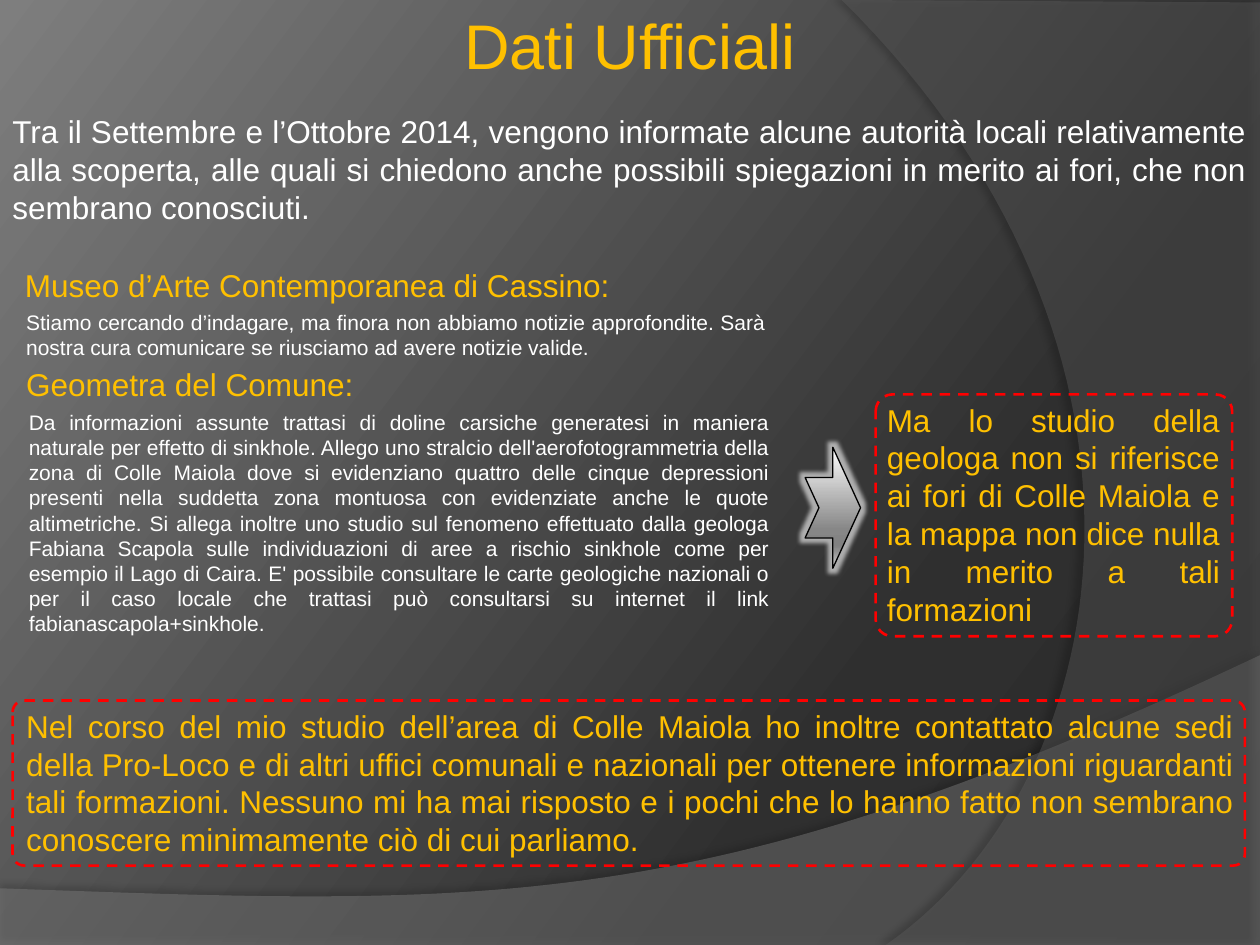
"""Build the slide "Dati Ufficiali" with the official replies about the holes."""
import pptx
import pptx.util
import pptx.dml.color
import pptx.enum.dml
import pptx.enum.shapes
import pptx.enum.text
import pptx.oxml
import pptx.oxml.ns

Inches = pptx.util.Inches
Pt = pptx.util.Pt
RGBColor = pptx.dml.color.RGBColor
qn = pptx.oxml.ns.qn
NS = pptx.oxml.ns.nsdecls("a")

GOLD = RGBColor(0xFF, 0xC0, 0x00)
WHITE = RGBColor(0xFF, 0xFF, 0xFF)
RED = RGBColor(0xFF, 0x00, 0x00)
BLACK = RGBColor(0x00, 0x00, 0x00)
SWEEP_GREY = RGBColor(0x7F, 0x7F, 0x7F)
SIDE_GREY = RGBColor(0x5E, 0x5E, 0x5E)


def set_gradient(fill, element, stops, clockwise_angle):
    fill.gradient()
    fill.gradient_angle = 360 - clockwise_angle
    stop_list = next(element.iter(qn("a:gsLst")))
    stop_list.clear()
    for position, color in stops:
        stop_list.append(pptx.oxml.parse_xml(
            f'<a:gs {NS} pos="{position * 1000}"><a:srgbClr val="{color}"/></a:gs>'))


def format_text(frame, text, size, color, alignment):
    frame.word_wrap = True
    frame.vertical_anchor = pptx.enum.text.MSO_ANCHOR.TOP
    frame.text = text
    paragraph = frame.paragraphs[0]
    paragraph.alignment = alignment
    font = paragraph.runs[0].font
    font.name = "Arial"
    font.size = Pt(size)
    font.color.rgb = color


presentation = pptx.Presentation()
presentation.slide_width = Inches(10)
presentation.slide_height = Inches(7.5)
slide = presentation.slides.add_slide(presentation.slide_layouts[5])
set_gradient(slide.background.fill, slide.element,
             [(0, "282828"), (30, "2F2F2F"), (100, "7E7E7E")], 217)

title = slide.shapes.title
title.left, title.top = Inches(0), Inches(0)
title.width, title.height = Inches(10), Inches(0.71)
format_text(title.text_frame, "Dati Ufficiali", 36, GOLD,
            pptx.enum.text.PP_ALIGN.CENTER)

swooshes = [
    ([(0, 7.05), (0, 7.51), (10, 7.51), (10, 5.2)],
     [(10, 5.2), (5.59, 7.29), (3.91, 7.19), (0, 7.05)],
     SWEEP_GREY, 45, 35, 3.5, 270),
    ([(10, 0.02), (10, 7.5), (7.03, 7.5)],
     [(7.03, 7.5), (8.91, 6.19), (9.47, 2.75), (6.68, 0)],
     SIDE_GREY, 40, 45, 4, 180),
]
CURVE_STEPS = 60
for corners, controls, color, opacity, shadow_opacity, distance, direction in swooshes:
    outline = list(corners)
    for step in range(1, CURVE_STEPS + 1):
        t = step / CURVE_STEPS
        weights = [(1 - t) ** 3, 3 * t * (1 - t) ** 2, 3 * t ** 2 * (1 - t), t ** 3]
        outline.append([sum(w * point[axis] for w, point in zip(weights, controls))
                        for axis in (0, 1)])
    outline = [(Inches(x), Inches(y)) for x, y in outline]
    builder = slide.shapes.build_freeform(*outline[0])
    builder.add_line_segments(outline[1:], close=True)
    swoosh = builder.convert_to_shape()
    swoosh.fill.solid()
    swoosh.fill.fore_color.rgb = color
    next(swoosh.element.iter(qn("a:srgbClr"))).append(
        pptx.oxml.parse_xml(f'<a:alpha {NS} val="{opacity * 1000}"/>'))
    swoosh.line.fill.background()
    swoosh.shadow.inherit = False
    next(swoosh.element.iter(qn("a:effectLst"))).append(pptx.oxml.parse_xml(
        f'<a:outerShdw {NS} blurRad="{Pt(4)}" dist="{Pt(distance)}" '
        f'dir="{direction * 60000}" algn="ctr" rotWithShape="0"><a:srgbClr val="000000">'
        f'<a:alpha val="{shadow_opacity * 1000}"/></a:srgbClr></a:outerShdw>'))
    title.element.addprevious(swoosh.element)

passages = [
    (0, 0.84, 9.99, 1.01, 18, WHITE,
     "Tra il Settembre e l’Ottobre 2014, vengono informate alcune autorità locali "
     "relativamente alla scoperta, alle quali si chiedono anche possibili spiegazioni "
     "in merito ai fori, che non sembrano conosciuti."),
    (0.1, 2.06, 6.07, 0.71, 18, GOLD, "Museo d’Arte Contemporanea di Cassino:"),
    (0.11, 2.41, 6.07, 0.5, 12, WHITE,
     "Stiamo cercando d’indagare, ma finora non abbiamo notizie approfondite. Sarà "
     "nostra cura comunicare se riusciamo ad avere notizie valide."),
    (0.13, 3.2, 6.08, 1.92, 12, WHITE,
     "Da informazioni assunte trattasi di doline carsiche generatesi in maniera naturale "
     "per effetto di sinkhole. Allego uno stralcio dell'aerofotogrammetria della zona di "
     "Colle Maiola dove si evidenziano quattro delle cinque depressioni presenti nella "
     "suddetta zona montuosa con evidenziate anche le quote altimetriche. Si allega "
     "inoltre uno studio sul fenomeno effettuato dalla geologa Fabiana Scapola sulle "
     "individuazioni di aree a rischio sinkhole come per esempio il Lago di Caira. "
     "E' possibile consultare le carte geologiche nazionali o per il caso locale che "
     "trattasi può consultarsi su internet il link fabianascapola+sinkhole."),
    (0.11, 2.85, 6.07, 0.71, 18, GOLD, "Geometra del Comune:"),
    (6.94, 3.13, 2.84, 1.92, 18, GOLD,
     "Ma lo studio della geologa non si riferisce ai fori di Colle Maiola e la mappa "
     "non dice nulla in merito a tali formazioni"),
    (0.11, 5.56, 9.78, 1.31, 18, GOLD,
     "Nel corso del mio studio dell’area di Colle Maiola ho inoltre contattato alcune "
     "sedi della Pro-Loco e di altri uffici comunali e nazionali per ottenere "
     "informazioni riguardanti tali formazioni. Nessuno mi ha mai risposto e i pochi "
     "che lo hanno fatto non sembrano conoscere minimamente ciò di cui parliamo."),
]
for left, top, width, height, size, color, text in passages:
    passage = slide.shapes.add_textbox(
        Inches(left), Inches(top), Inches(width), Inches(height))
    format_text(passage.text_frame, text, size, color,
                pptx.enum.text.PP_ALIGN.JUSTIFY)

arrow = slide.shapes.add_shape(
    pptx.enum.shapes.MSO_SHAPE.NOTCHED_RIGHT_ARROW,
    Inches(6.39), Inches(3.55), Inches(0.44), Inches(0.96))
set_gradient(arrow.fill, arrow.element,
             [(0, "FEFEFE"), (68, "878787"), (81, "818181"),
              (86, "909090"), (100, "D3D3D3")], 90)
arrow.line.color.rgb = BLACK
arrow.line.width = Pt(0.75)
arrow.shadow.inherit = False
next(arrow.element.iter(qn("a:effectLst"))).append(pptx.oxml.parse_xml(
    f'<a:glow {NS} rad="{Pt(5)}"><a:srgbClr val="FFFFFF">'
    '<a:alpha val="60000"/></a:srgbClr></a:glow>'))

for left, top, width, height in [(0.1, 5.56, 9.78, 1.31), (6.95, 3.13, 2.83, 1.92)]:
    frame = slide.shapes.add_shape(
        pptx.enum.shapes.MSO_SHAPE.ROUNDED_RECTANGLE,
        Inches(left), Inches(top), Inches(width), Inches(height))
    frame.adjustments[0] = 0.07
    frame.fill.background()
    frame.line.color.rgb = RED
    frame.line.width = Pt(1.5)
    frame.line.dash_style = pptx.enum.dml.MSO_LINE.DASH
    frame.shadow.inherit = False

presentation.save("out.pptx")
